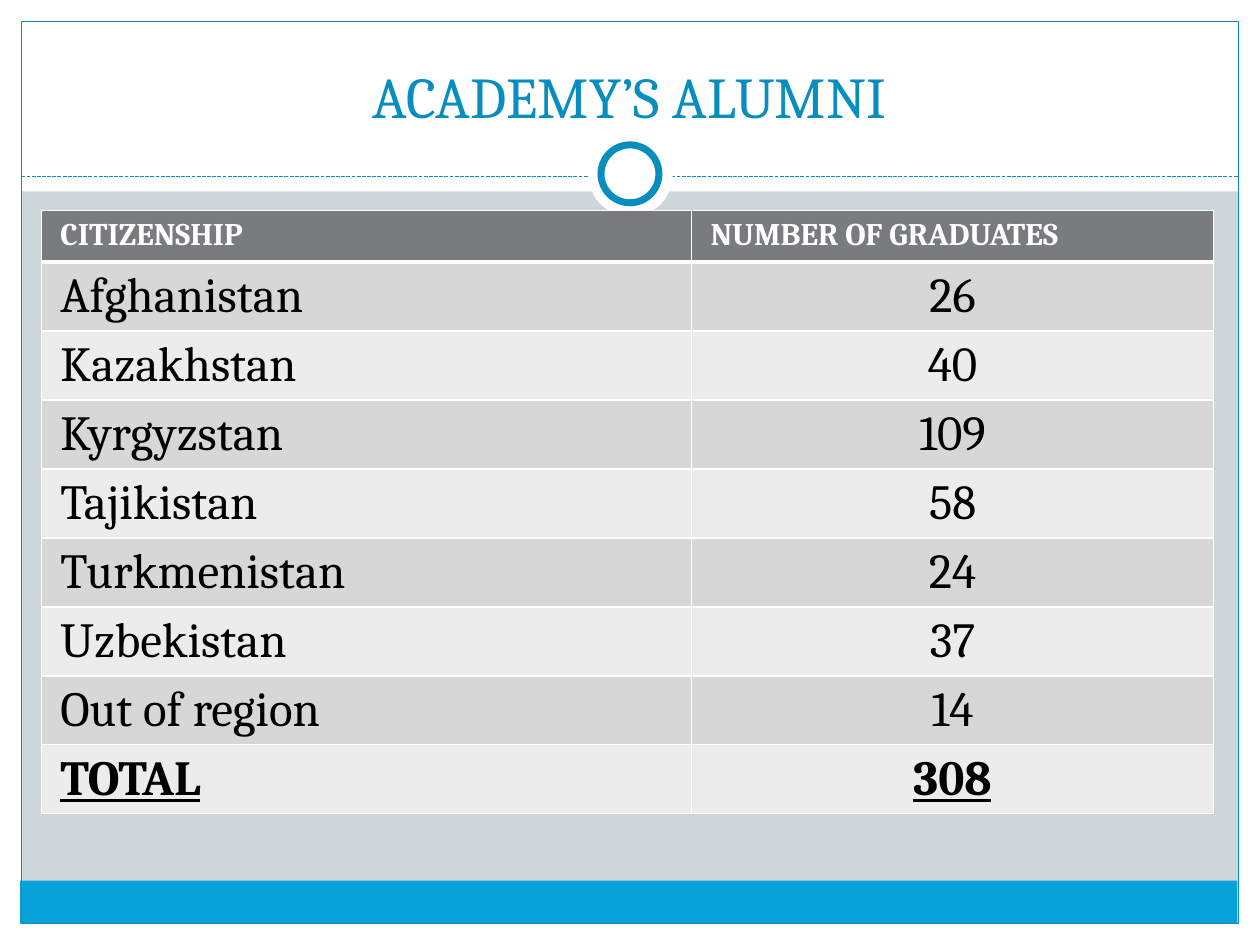
"""Build a slide with a table of academy alumni by citizenship."""
from lxml import etree
from pptx import Presentation
from pptx import util as u
from pptx.dml.color import RGBColor
from pptx.enum import dml, shapes, text
from pptx.oxml.ns import qn

WHITE = RGBColor(0xFF, 0xFF, 0xFF)
BLACK = RGBColor(0, 0, 0)
BLUE = RGBColor(0x07, 0x8E, 0xBF)
FOOTER_BLUE = RGBColor(0x08, 0xA1, 0xD9)
BACKDROP = RGBColor(0xCD, 0xD7, 0xD9)
HEADER_GRAY = RGBColor(0x79, 0x7B, 0x7E)
BANDS = (RGBColor(0xD7, 0xD7, 0xD8), RGBColor(0xEC, 0xEC, 0xEC))
FONT = "Cambria"

GRADUATES = [
    ("CITIZENSHIP", "NUMBER OF GRADUATES"),
    ("Afghanistan", "26"),
    ("Kazakhstan", "40"),
    ("Kyrgyzstan", "109"),
    ("Tajikistan", "58"),
    ("Turkmenistan", "24"),
    ("Uzbekistan", "37"),
    ("Out of region", "14"),
    ("TOTAL", "308"),
]


def apply(target, values):
    """Set every attribute named in a dict of format values."""
    for name, value in values.items():
        setattr(target, name, value)


def add_figure(slide, kind, box, fill=None, line=None, width=0.75):
    """Add a preset shape with an optional fill and outline."""
    figure = slide.shapes.add_shape(kind, *map(u.Inches, box))
    figure.shadow.inherit = False
    for paint, color in ((figure.fill, fill), (figure.line.fill, line)):
        if color is None:
            paint.background()
        else:
            paint.solid()
            paint.fore_color.rgb = color
    if line is not None:
        figure.line.width = u.Pt(width)


def add_divider(slide):
    """Add the dashed line under the title."""
    divider = slide.shapes.add_connector(
        shapes.MSO_CONNECTOR.STRAIGHT,
        *map(u.Inches, (0.17, 1.4, 9.83, 1.4)))
    divider.line.color.rgb = BLUE
    apply(divider.line, {"width": u.Pt(0.75),
                         "dash_style": dml.MSO_LINE.SQUARE_DOT})
    etree.SubElement(divider.element.spPr, qn("a:effectLst"))


def add_frame(slide):
    """Add the white margins, footer band, border, divider and ring."""
    rectangle, oval = shapes.MSO_SHAPE.RECTANGLE, shapes.MSO_SHAPE.OVAL
    margins = [(0, 7.33, 10, 0.17), (0, 0, 10, 1.52),
               (0, 0, 0.17, 7.5), (9.83, 0, 0.17, 7.5)]
    for box in margins:
        add_figure(slide, rectangle, box, WHITE)
    add_figure(slide, rectangle, (0.16, 6.99, 9.66, 0.34), FOOTER_BLUE)
    add_figure(slide, rectangle, (0.17, 0.17, 9.66, 7.16), line=BLUE)
    add_divider(slide)
    add_figure(slide, oval, (4.67, 1.05, 0.67, 0.67), WHITE)
    add_figure(slide, oval, (4.77, 1.15, 0.46, 0.46), WHITE, BLUE, 4)


def set_title(slide, wording):
    """Fill, place and format the title, in front of the frame."""
    title = slide.shapes.title
    title.element.getparent().append(title.element)
    apply(title, {"left": u.Inches(0.33), "top": u.Inches(0.25),
                  "width": u.Inches(9.33), "height": u.Inches(0.83)})
    title.text_frame.text = wording
    apply(title.text_frame, {"vertical_anchor": text.MSO_ANCHOR.BOTTOM,
                             "auto_size": text.MSO_AUTO_SIZE.NONE,
                             "word_wrap": True})
    heading = title.text_frame.paragraphs[0]
    heading.alignment = text.PP_ALIGN.CENTER
    font = heading.runs[0].font
    apply(font, {"name": FONT, "size": u.Pt(33)})
    font.color.rgb = BLUE


def set_borders(cell, widths):
    """Draw white borders of the given point widths by side."""
    properties = cell._tc.get_or_add_tcPr()
    for side, width in widths.items():
        border = etree.SubElement(properties, qn(f"a:ln{side}"),
                                  w=str(u.Pt(width)))
        paint = etree.SubElement(border, qn("a:solidFill"))
        etree.SubElement(paint, qn("a:srgbClr"), val=str(WHITE))


def fill_cell(cell, wording, row, column):
    """Write one cell and format it by its place in the table."""
    header, total = row == 0, row == len(GRADUATES) - 1
    set_borders(cell, {"L": 1, "R": 1, "T": 3 if row == 1 else 1,
                       "B": 3 if header else 1})
    cell.fill.solid()
    cell.fill.fore_color.rgb = HEADER_GRAY if header else BANDS[(row - 1) % 2]
    apply(cell, {"margin_left": u.Inches(0.15),
                 "margin_right": u.Inches(0.15),
                 "margin_top": u.Inches(0.05),
                 "margin_bottom": u.Inches(0.05),
                 "text": wording})
    entry = cell.text_frame.paragraphs[0]
    if column and not header:
        entry.alignment = text.PP_ALIGN.CENTER
    font = entry.runs[0].font
    apply(font, {"name": FONT, "size": u.Pt(18 if header else 28),
                 "bold": header or total, "underline": total})
    font.color.rgb = WHITE if header else BLACK


def add_graduates(slide):
    """Add the table of graduates by citizenship."""
    row_height = 0.41
    table = slide.shapes.add_table(
        len(GRADUATES), 2, u.Inches(0.33), u.Inches(1.67),
        u.Inches(9.3), u.Inches(row_height * len(GRADUATES))).table
    for column, width in zip(table.columns, (5.16, 4.14)):
        column.width = u.Inches(width)
    for row, entries in enumerate(GRADUATES):
        table.rows[row].height = u.Inches(row_height)
        for column, wording in enumerate(entries):
            fill_cell(table.cell(row, column), wording, row, column)


def main():
    """Build and save the slide."""
    deck = Presentation()
    apply(deck, {"slide_width": u.Inches(10), "slide_height": u.Inches(7.5)})
    slide = deck.slides.add_slide(deck.slide_layouts.get_by_name("Title Only"))
    slide.background.fill.solid()
    slide.background.fill.fore_color.rgb = BACKDROP
    add_frame(slide)
    set_title(slide, "ACADEMY’S ALUMNI")
    add_graduates(slide)
    deck.save("out.pptx")


if __name__ == "__main__":
    main()
